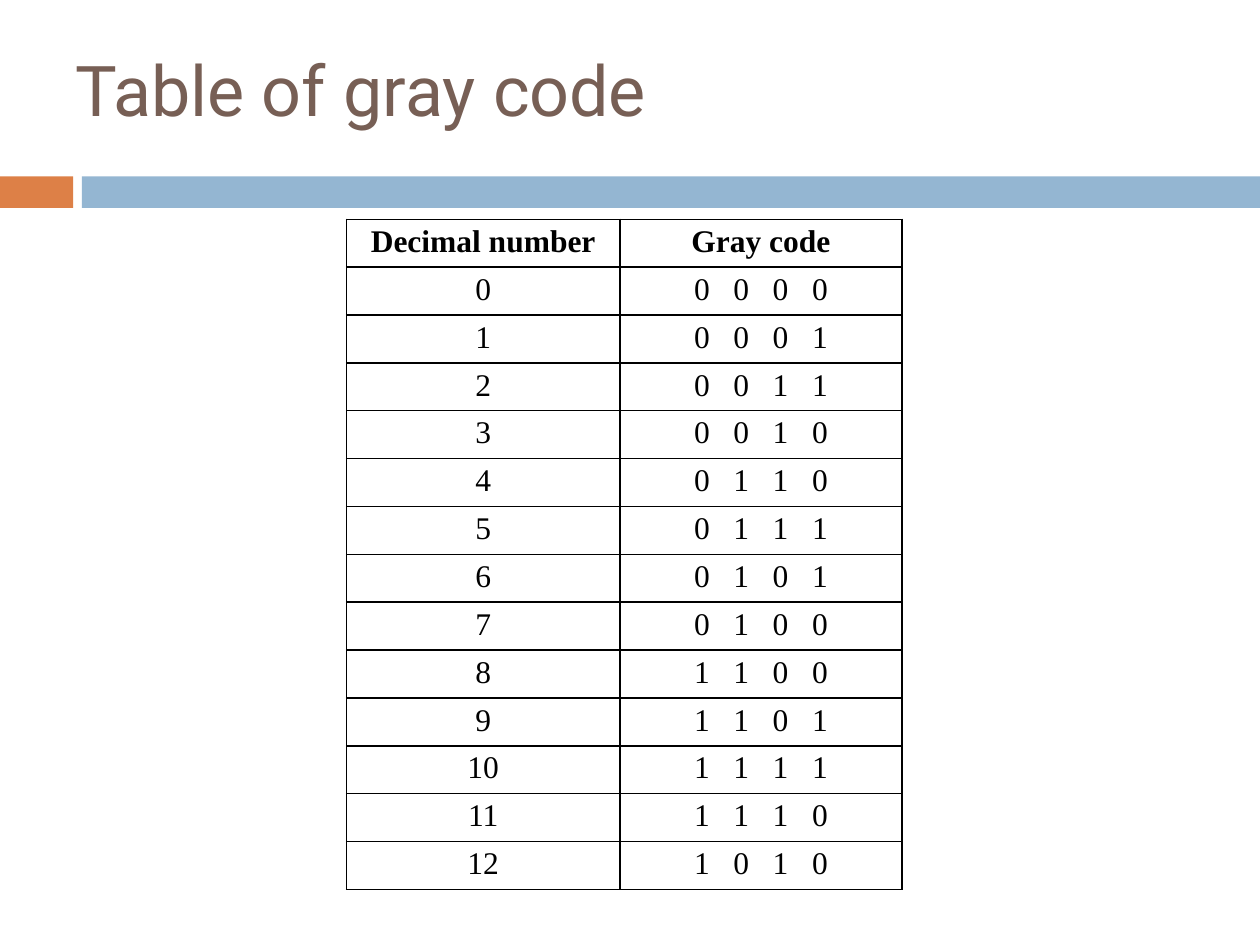
"""Build a slide with a table of decimal numbers and their Gray codes."""
import lxml.etree
import pptx
import pptx.dml.color
import pptx.enum.shapes
import pptx.enum.text
import pptx.oxml.ns
import pptx.util

Inches = pptx.util.Inches
COLORS = {
    "title": "775F55",
    "accent": "DD8047",
    "band": "94B6D2",
    "text": "000000",
    "border": "000000",
}
COLUMN_WIDTHS = (2.17, 2.24)
ROW_HEIGHT = 5.29 / 14


def color(name):
    return pptx.dml.color.RGBColor.from_string(COLORS[name])


def write_text(frame, text, *, font, size, fill, bold=False, align="LEFT"):
    paragraph = frame.paragraphs[0]
    paragraph.alignment = getattr(pptx.enum.text.PP_ALIGN, align)
    run = paragraph.add_run()
    run.text = text
    run.font.name = font
    run.font.size = pptx.util.Pt(size)
    run.font.bold = bold
    run.font.color.rgb = color(fill)


def add_bar(slide, left, width, fill):
    shape = slide.shapes.add_shape(
        pptx.enum.shapes.MSO_SHAPE.RECTANGLE,
        Inches(left), Inches(1.4), Inches(width), Inches(0.25),
    )
    shape.shadow.inherit = False
    shape.fill.solid()
    shape.fill.fore_color.rgb = color(fill)
    shape.line.fill.background()


def add_title(slide, text):
    shape = slide.shapes.add_textbox(Inches(0.5), Inches(0.08), Inches(9), Inches(1.25))
    frame = shape.text_frame
    frame.word_wrap = True
    frame.vertical_anchor = pptx.enum.text.MSO_ANCHOR.MIDDLE
    write_text(frame, text, font="Roboto", size=40, fill="title")


def add_borders(cell):
    qn = pptx.oxml.ns.qn
    properties = cell._tc.get_or_add_tcPr()
    for side in ("a:lnL", "a:lnR", "a:lnT", "a:lnB"):
        line = lxml.etree.SubElement(properties, qn(side), w=str(pptx.util.Pt(1)))
        fill = lxml.etree.SubElement(line, qn("a:solidFill"))
        lxml.etree.SubElement(fill, qn("a:srgbClr"), val=COLORS["border"])


def add_table(slide, rows):
    table = slide.shapes.add_table(
        len(rows), len(COLUMN_WIDTHS), Inches(2.75), Inches(1.74),
        Inches(sum(COLUMN_WIDTHS)), Inches(ROW_HEIGHT * len(rows)),
    ).table
    table.horz_banding = False
    for column, width in zip(table.columns, COLUMN_WIDTHS):
        column.width = Inches(width)
    for row_index, values in enumerate(rows):
        table.rows[row_index].height = Inches(ROW_HEIGHT)
        for column_index, value in enumerate(values):
            cell = table.cell(row_index, column_index)
            cell.margin_top = cell.margin_bottom = Inches(0.04)
            add_borders(cell)
            cell.fill.background()
            write_text(cell.text_frame, value, font="Times New Roman", size=18,
                       fill="text", bold=row_index == 0, align="CENTER")


def gray_code(number):
    return "   ".join(f"{number ^ (number >> 1):04b}")


def main():
    presentation = pptx.Presentation()
    presentation.slide_width = Inches(10)
    presentation.slide_height = Inches(7.5)
    slide = presentation.slides.add_slide(presentation.slide_layouts[6])
    add_bar(slide, 0, 0.58, "accent")
    add_bar(slide, 0.65, 9.35, "band")
    add_title(slide, "Table of gray code")
    codes = [(str(number), gray_code(number)) for number in range(13)]
    add_table(slide, [("Decimal number", "Gray code"), *codes])
    presentation.save("out.pptx")


if __name__ == "__main__":
    main()
